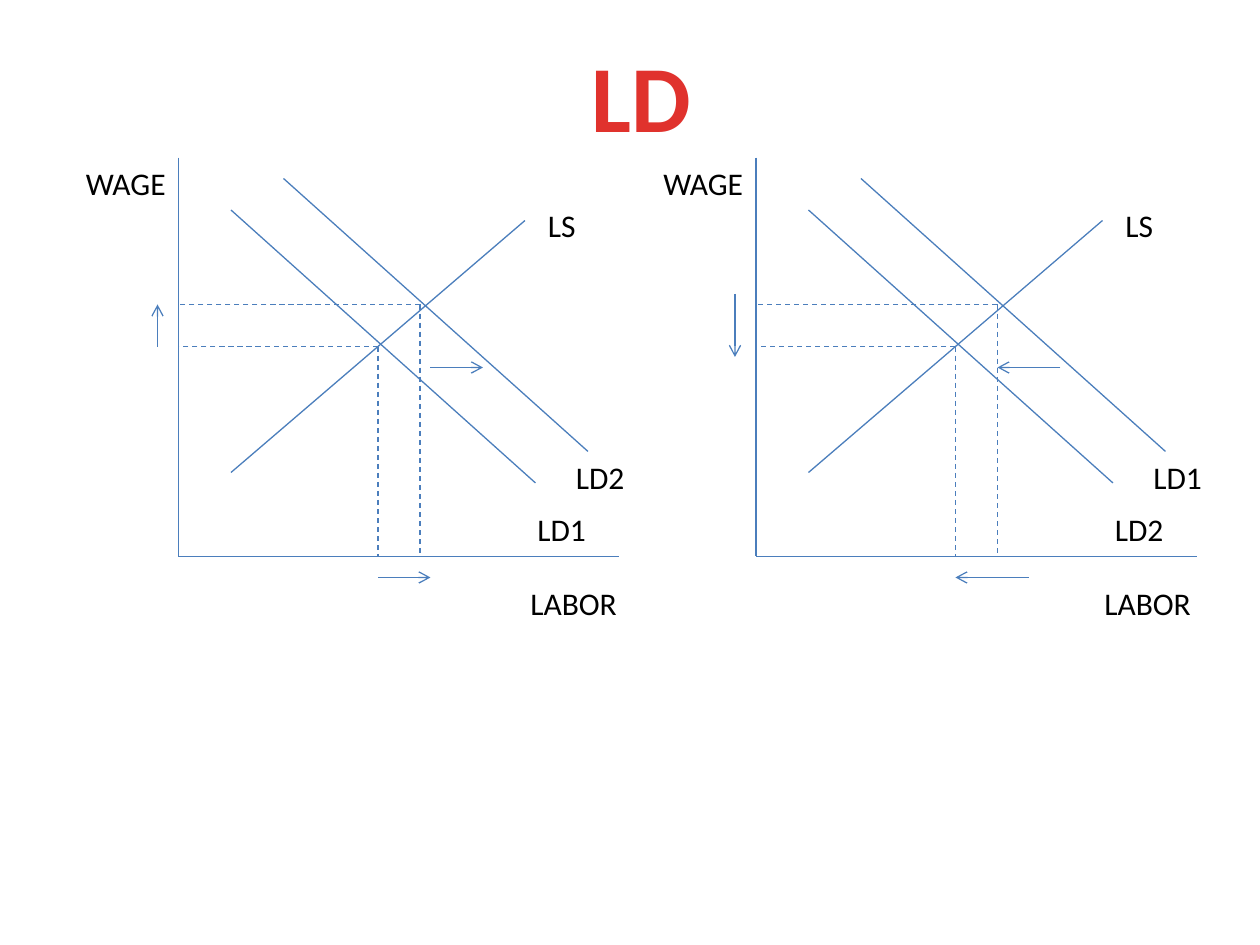
from lxml import etree
from pptx import Presentation
from pptx.dml.color import RGBColor
from pptx.enum import dml, shapes, text
from pptx.oxml.ns import qn
from pptx.util import Pt

FONT = "Calibri"
BLUE, RED, BLACK = "4B7EBC", "E0322D", "000000"


def paint(color_format, hex_color):
    color_format.rgb = RGBColor.from_string(hex_color)


def add_line(slide, start, end, dashed=False, arrow=False):
    line = slide.shapes.add_connector(
        shapes.MSO_CONNECTOR.STRAIGHT, *(Pt(v) for v in (*start, *end)))
    line.line.width = Pt(0.75)
    paint(line.line.color, BLUE)
    if dashed:
        line.line.dash_style = dml.MSO_LINE.DASH
    if arrow:
        etree.SubElement(line.line._get_or_add_ln(), qn("a:tailEnd"), type="arrow")
    etree.SubElement(line._element.spPr, qn("a:effectLst"))


def add_label(slide, x, y, w, caption):
    tf = slide.shapes.add_textbox(Pt(x), Pt(y), Pt(w), Pt(29)).text_frame
    tf.word_wrap = False
    tf.auto_size = text.MSO_AUTO_SIZE.SHAPE_TO_FIT_TEXT
    tf.text = caption
    font = tf.paragraphs[0].runs[0].font
    font.name, font.size = FONT, Pt(18)
    paint(font.color, BLACK)


def add_title(slide, x, y, w, h, caption):
    title = slide.shapes.title
    title.left, title.top, title.width, title.height = Pt(x), Pt(y), Pt(w), Pt(h)
    tf = title.text_frame
    tf.text = caption
    tf.word_wrap = False
    tf.auto_size = text.MSO_AUTO_SIZE.SHAPE_TO_FIT_TEXT
    tf.vertical_anchor = text.MSO_ANCHOR.TOP
    p = tf.paragraphs[0]
    p.alignment = text.PP_ALIGN.CENTER
    font = p.runs[0].font
    font.name, font.size, font.bold = FONT, Pt(54), True
    paint(font.color, RED)
    p.runs[0]._r.get_or_add_rPr().set("spc", "50")


def add_market(slide, x, y, w, h, inner, outer, labor_x, arrows):
    """Labor market graph whose axes span the given box."""
    def at(point):
        return x + point[0], y + point[1]

    # Axes
    add_line(slide, at((0, 0)), at((0, h)))
    add_line(slide, at((0, h)), at((w, h)))

    # Demand and supply curves
    for start, end in (((30, 30), (204, 186)),
                       ((60, 12), (234, 168)),
                       ((30, 180), (198, 36))):
        add_line(slide, at(start), at(end))

    # Guides from each equilibrium to both axes
    for labor, wage in ((114, 108), (138, 84)):
        add_line(slide, at((labor, wage)), at((0, wage)), dashed=True)
        add_line(slide, at((labor, wage)), at((labor, h)), dashed=True)

    # Direction of change in demand, wage and labor
    for start, end in arrows:
        add_line(slide, at(start), at(end), arrow=True)

    # Labels
    for dx, dy, width, caption in ((198, 198, 42.5, inner),
                                   (220, 168, 42.5, outer),
                                   (204, 24, 31, "LS"),
                                   (-60, 0, 60.5, "WAGE"),
                                   (labor_x, 240, 64, "LABOR")):
        add_label(slide, *at((dx, dy)), width, caption)


def main():
    prs = Presentation()
    prs.slide_width, prs.slide_height = Pt(720), Pt(540)
    slide = prs.slides.add_slide(prs.slide_layouts[5])

    add_title(slide, 330, 18, 73, 73, "LD")

    # Demand rises
    add_market(slide, 102, 90, 252, 228, "LD1", "LD2", 194,
               (((144, 120), (174, 120)),
                ((-12, 108), (-12, 84)),
                ((114, 240), (144, 240))))
    # Demand falls
    add_market(slide, 432, 90, 252, 228, "LD2", "LD1", 192,
               (((174, 120), (138, 120)),
                ((-12, 78), (-12, 114)),
                ((156, 240), (114, 240))))

    prs.save("out.pptx")


if __name__ == "__main__":
    main()
